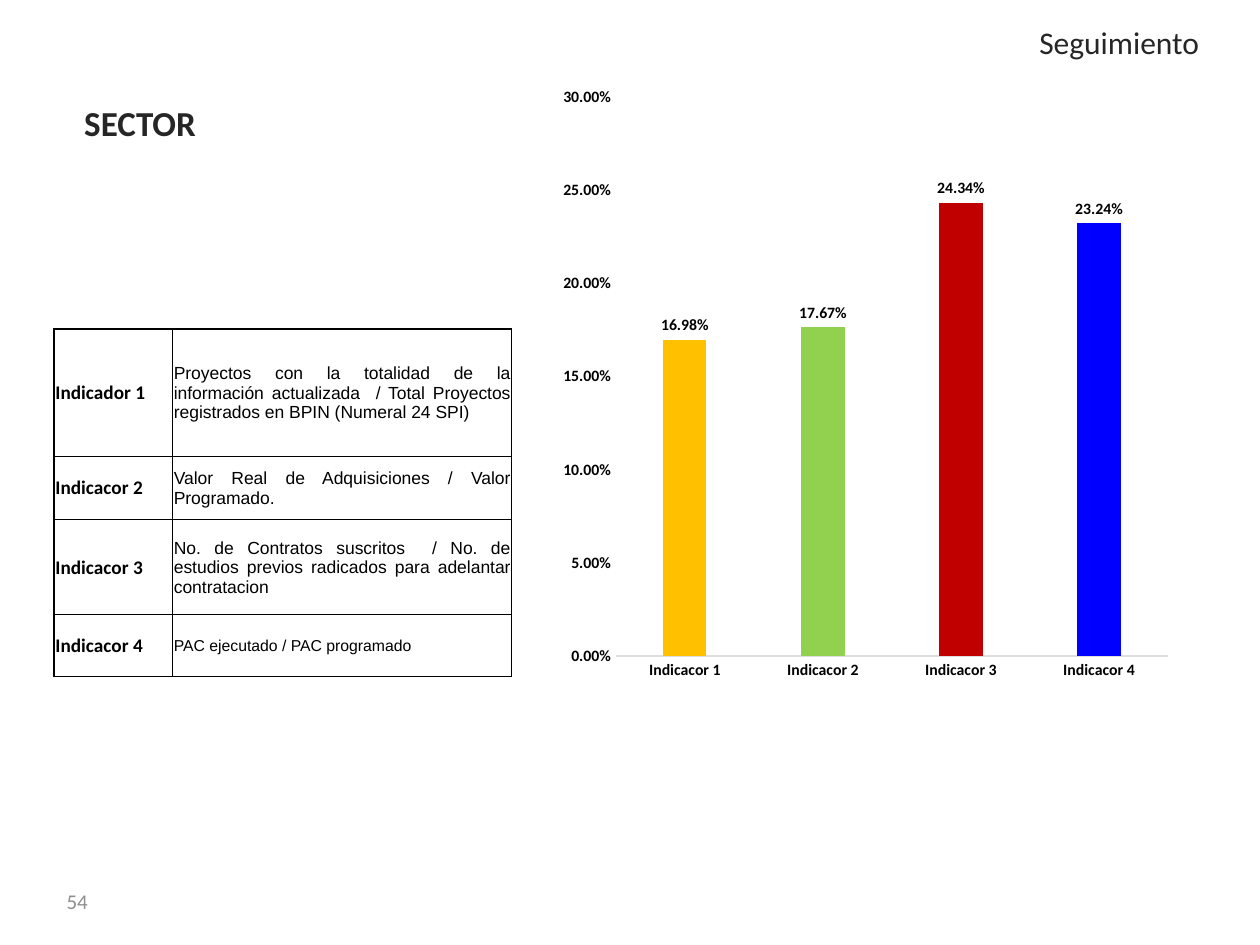
from dataclasses import dataclass
from lxml.etree import SubElement
from pptx import Presentation
from pptx.chart.data import CategoryChartData
from pptx.dml.color import RGBColor
from pptx.enum.chart import XL_CHART_TYPE, XL_LABEL_POSITION, XL_TICK_MARK
from pptx.enum.text import MSO_ANCHOR, PP_ALIGN
from pptx.oxml.ns import qn
from pptx.util import Inches, Pt

COLUMNS, ROWS = 100, 75
BLACK, DARK, GRAY = "000000", "262626", "8E8E8E"
INDICATORS = [
    ("Indicador 1", "Proyectos con la totalidad de la información actualizada  / Total Proyectos registrados en BPIN (Numeral 24 SPI)", 10.1, 10),
    ("Indicacor 2", "Valor Real de Adquisiciones / Valor Programado.", 5, 10),
    ("Indicacor 3", "No. de Contratos suscritos  / No. de estudios previos radicados para adelantar contratacion", 7.6, 10),
    ("Indicacor 4", "PAC ejecutado / PAC programado", 4.9, 9),
]
RESULTS = [
    ("Indicacor 1", 0.1698, "FFC000"),
    ("Indicacor 2", 0.1767, "92D050"),
    ("Indicacor 3", 0.2434, "C00000"),
    ("Indicacor 4", 0.2324, "0000FF"),
]


def color(value):
    return RGBColor.from_string(value)


@dataclass
class SlideBuilder:
    deck: object
    page: object
    font: str = "Calibri"
    body_font: str = "Arial"

    def across(self, columns):
        return round(self.deck.slide_width * columns / COLUMNS)

    def down(self, rows):
        return round(self.deck.slide_height * rows / ROWS)

    def place(self, left, top, width, height):
        return self.across(left), self.down(top), self.across(width), self.down(height)

    def style(self, font, size, ink=BLACK, bold=False, name=None):
        font.name = name or self.font
        font.size = Pt(size)
        font.bold = bold
        font.color.rgb = color(ink)

    def text(self, words, area, size, ink=DARK, bold=False, wrap=True, anchor=MSO_ANCHOR.TOP):
        frame = self.page.shapes.add_textbox(*self.place(*area)).text_frame
        frame.word_wrap = wrap
        frame.vertical_anchor = anchor
        frame.text = words
        self.style(frame.paragraphs[0].runs[0].font, size, ink, bold)

    def borders(self, cell, top, bottom):
        properties = cell._tc.get_or_add_tcPr()
        sides = (("L", 1), ("R", 1), ("T", top), ("B", bottom))
        for position, (side, width) in enumerate(sides):
            line = SubElement(properties, qn(f"a:ln{side}"), w=str(Pt(width)))
            fill = SubElement(line, qn("a:solidFill"))
            SubElement(fill, qn("a:srgbClr"), val=BLACK)
            properties.insert(position, line)

    def cell(self, cell, words, size, name, bold, alignment):
        cell.text = words
        cell.vertical_anchor = MSO_ANCHOR.MIDDLE
        cell.margin_left = cell.margin_right = cell.margin_top = Inches(0.01)
        cell.margin_bottom = 0
        para = cell.text_frame.paragraphs[0]
        para.alignment = alignment
        self.style(para.runs[0].font, size, bold=bold, name=name)
        cell.fill.solid()
        cell.fill.fore_color.rgb = color("FFFFFF")

    def table(self, rows, area, widths):
        table = self.page.shapes.add_table(len(rows), len(widths), *self.place(*area)).table
        table.first_row = table.horz_banding = False
        for column, width in zip(table.columns, widths):
            column.width = self.across(width)
        last = len(rows) - 1
        for index, (label, formula, height, size) in enumerate(rows):
            table.rows[index].height = self.down(height)
            name_cell, formula_cell = table.rows[index].cells
            self.cell(name_cell, label, 11, self.font, True, PP_ALIGN.LEFT)
            self.cell(formula_cell, formula, size, self.body_font, False, PP_ALIGN.JUSTIFY)
            for cell in (name_cell, formula_cell):
                self.borders(cell, 1 if index == 0 else 0.5, 1 if index == last else 0.5)

    def axis(self, axis):
        axis.has_major_gridlines = False
        axis.major_tick_mark = axis.minor_tick_mark = XL_TICK_MARK.NONE
        self.style(axis.tick_labels.font, 9, bold=True)

    def chart(self, results, area):
        data = CategoryChartData(number_format="0.00%")
        data.categories = [name for name, _, _ in results]
        data.add_series("Series 1", [value for _, value, _ in results])
        chart = self.page.shapes.add_chart(
            XL_CHART_TYPE.COLUMN_CLUSTERED, *self.place(*area), data).chart
        chart.has_title = chart.has_legend = False
        self.style(chart.font, 10, DARK)
        self.axis(chart.category_axis)
        line = chart.category_axis.format.line
        line.color.rgb = color("DEDEDE")
        line.width = Pt(0.75)
        scale = chart.value_axis
        self.axis(scale)
        scale.format.line.fill.background()
        scale.minimum_scale, scale.maximum_scale, scale.major_unit = 0, 0.3, 0.05
        scale.tick_labels.number_format = "0.00%"
        scale.tick_labels.number_format_is_linked = False
        plot = chart.plots[0]
        plot.gap_width, plot.overlap = 219, -27
        plot.vary_by_categories = False
        series = plot.series[0]
        series.format.fill.solid()
        series.format.fill.fore_color.rgb = color("003893")
        for index, (_, _, shade) in enumerate(results):
            fill = series.points[index].format.fill
            fill.solid()
            fill.fore_color.rgb = color(shade)
        labels = series.data_labels
        labels.show_value = True
        labels.position = XL_LABEL_POSITION.OUTSIDE_END
        labels.number_format = "0.00%"
        labels.number_format_is_linked = False
        self.style(labels.font, 9, bold=True)


def main():
    deck = Presentation()
    deck.slide_width, deck.slide_height = Inches(10), Inches(7.5)
    page = deck.slides.add_slide(deck.slide_layouts[6])
    slide = SlideBuilder(deck, page)
    slide.text("54", (4.3, 69.5, 23.3, 4), 12, GRAY, anchor=MSO_ANCHOR.MIDDLE)
    slide.text("Seguimiento", (81.5, 1.3, 14.9, 4), 18, wrap=False)
    slide.text("SECTOR", (5.7, 7.6, 73.2, 4.4), 20, bold=True)
    slide.table(INDICATORS, (4.3, 26.1, 36.3, 27.6), (9.4, 26.9))
    slide.chart(RESULTS, (43.7, 6, 50, 48.9))
    deck.save("out.pptx")


if __name__ == "__main__":
    main()
